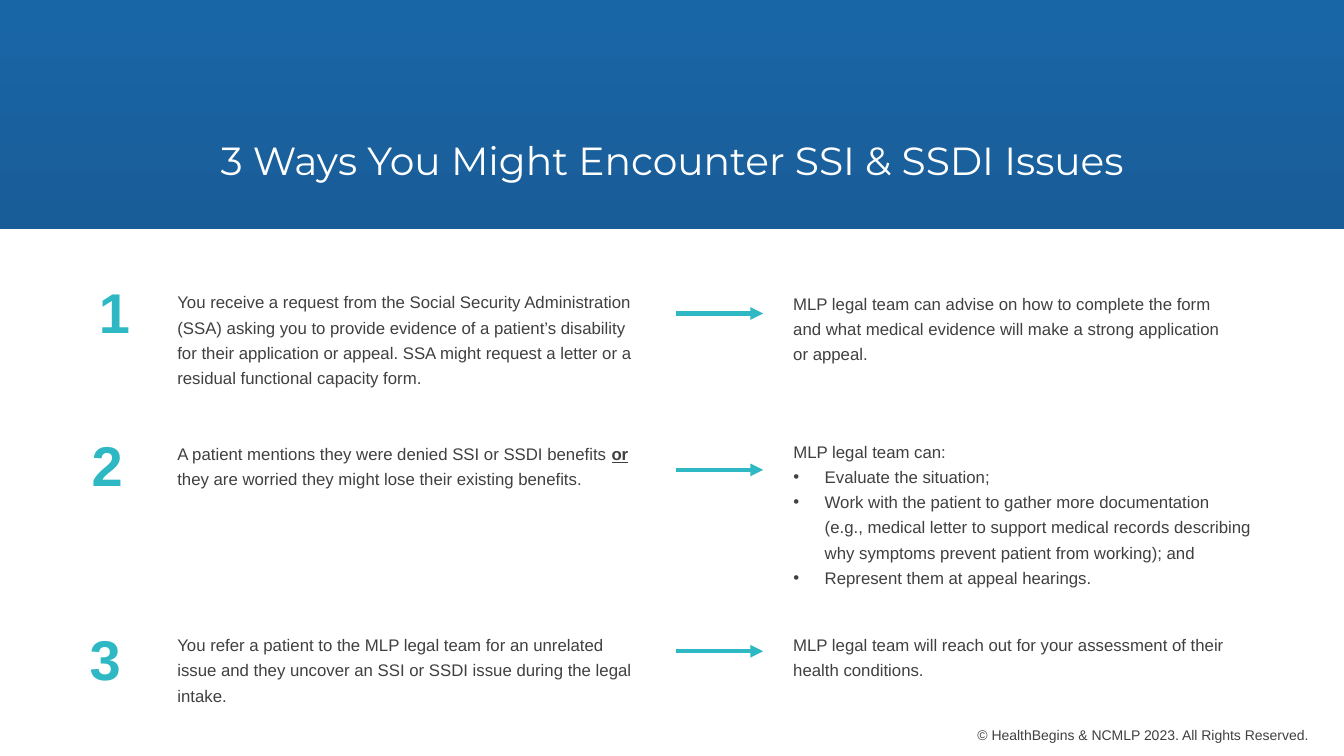
from dataclasses import dataclass

import lxml.etree
import pptx
import pptx.dml.color
import pptx.enum.shapes
import pptx.enum.text
import pptx.oxml.ns
import pptx.util

Cm, Pt = pptx.util.Cm, pptx.util.Pt
qn = pptx.oxml.ns.qn
ALIGN = pptx.enum.text.PP_ALIGN
ANCHOR = pptx.enum.text.MSO_ANCHOR
AUTOSIZE = pptx.enum.text.MSO_AUTO_SIZE

SLIDE_W, SLIDE_H = 33.87, 19.05
BAND_H = 5.77
TEAL, GREY, WHITE = "2EB8C3", "404040", "FFFFFF"
CASE_X, CASE_W = 4.22, 12.32
ARROW_X, ARROW_END = 17.04, 19.23
ANSWER_X, ANSWER_W = 19.74, 12.6
INDENT = 0.79
BULLET, EMPHASIS = "• ", "**"


@dataclass
class Row:
    """One numbered situation, its arrow and the legal team's answer."""
    number: str
    number_x: float
    number_y: float
    case: str
    case_y: float
    case_h: float
    arrow_y: float
    answer: list[str]
    answer_y: float
    answer_h: float


ROWS = [
    Row("1", 2.24, 6.86,
        "You receive a request from the Social Security Administration (SSA) asking you "
        "to provide evidence of a patient’s disability for their application or appeal. "
        "SSA might request a letter or a residual functional capacity form.",
        7.11, 2.79, 7.9,
        ["MLP legal team can advise on how to complete the form\n"
         "and what medical evidence will make a strong application\nor appeal."],
        7.14, 2.16),
    Row("2", 2.06, 10.72,
        "A patient mentions they were denied SSI or SSDI benefits **or** "
        "they are worried they might lose their existing benefits.",
        10.92, 1.5, 11.84,
        ["MLP legal team can:",
         "• Evaluate the situation;",
         "• Work with the patient to gather more documentation\n"
         "(e.g., medical letter to support medical records describing "
         "why symptoms prevent patient from working); and",
         "• Represent them at appeal hearings."],
        10.87, 4.06),
    Row("3", 2.01, 15.6,
        "You refer a patient to the MLP legal team for an unrelated issue and they "
        "uncover an SSI or SSDI issue during the legal intake.",
        15.75, 2.16, 16.41,
        ["MLP legal team will reach out for your assessment of their health conditions."],
        15.75, 1.5),
]


def rgb(value: str) -> pptx.dml.color.RGBColor:
    return pptx.dml.color.RGBColor.from_string(value)


def place(sp, x: float, y: float, w: float, h: float) -> None:
    sp.left, sp.top, sp.width, sp.height = Cm(x), Cm(y), Cm(w), Cm(h)


def set_bullet(p, bulleted: bool) -> None:
    pPr = p._p.get_or_add_pPr()
    pPr.set("marL", str(Cm(INDENT) if bulleted else 0))
    pPr.set("indent", str(-Cm(INDENT) if bulleted else 0))
    if bulleted:
        lxml.etree.SubElement(pPr, qn("a:buFont")).set("typeface", "Arial")
        lxml.etree.SubElement(pPr, qn("a:buChar")).set("char", "•")
    else:
        lxml.etree.SubElement(pPr, qn("a:buNone"))


def write(sp, lines: list[str], size: float, color: str, font: str = "Arial",
          bold: bool = False, spacing: float = 1.0, align=ALIGN.LEFT) -> None:
    """Fill a shape; text between ** marks is bold and underlined."""
    tf = sp.text_frame
    tf.word_wrap = True
    tf.auto_size = AUTOSIZE.NONE
    tf.vertical_anchor = ANCHOR.TOP
    for i, line in enumerate(lines):
        p = tf.paragraphs[0] if i == 0 else tf.add_paragraph()
        parts = line.removeprefix(BULLET).split(EMPHASIS)
        p.text = parts[0]
        for part in parts[1:]:
            p.add_run().text = part
        p.alignment, p.line_spacing = align, spacing
        p.space_before = p.space_after = Pt(0)
        set_bullet(p, line.startswith(BULLET))
        for r in p.runs:
            r.font.name, r.font.size, r.font.bold = font, Pt(size), bold
            r.font.color.rgb = rgb(color)
        for r in p.runs[1::2] if len(parts) > 1 else []:
            r.font.bold = r.font.underline = True
        for br in p._p.findall(qn("a:br")):
            lxml.etree.SubElement(br, qn("a:rPr")).set("sz", str(size * 100))


def add_text(s, x: float, y: float, w: float, h: float, lines: list[str],
             size: float, color: str, **style) -> None:
    write(s.shapes.add_textbox(Cm(x), Cm(y), Cm(w), Cm(h)), lines, size, color, **style)


def add_band(s) -> None:
    sp = s.shapes.add_shape(pptx.enum.shapes.MSO_SHAPE.RECTANGLE,
                            0, 0, Cm(SLIDE_W), Cm(BAND_H))
    sp.shadow.inherit = False
    sp.line.fill.background()
    sp.fill.gradient()
    sp.fill.gradient_angle = 270
    for stop, position, color in zip(sp.fill.gradient_stops, (0, 1), ("1966A7", "195D98")):
        stop.position, stop.color.rgb = position, rgb(color)
    s.shapes._spTree.insert(2, sp._element)  # behind the title


def add_arrow(s, y: float) -> None:
    line = s.shapes.add_connector(pptx.enum.shapes.MSO_CONNECTOR.STRAIGHT,
                                  Cm(ARROW_X), Cm(y), Cm(ARROW_END), Cm(y))
    line.line.color.rgb = rgb(TEAL)
    line.line.width = Pt(3)
    ln = line.line._get_or_add_ln()
    lxml.etree.SubElement(ln, qn("a:tailEnd")).set("type", "triangle")
    lxml.etree.SubElement(line._element.spPr, qn("a:effectLst"))


def add_row(s, row: Row, body) -> None:
    add_text(s, row.number_x, row.number_y, 1.52, 1.96, [row.number], 40, TEAL, bold=True)
    add_text(s, CASE_X, row.case_y, CASE_W, row.case_h, [row.case], 12, GREY, spacing=1.25)
    add_arrow(s, row.arrow_y)
    box = (ANSWER_X, row.answer_y, ANSWER_W, row.answer_h)
    if len(row.answer) > 1:  # the list goes in the body placeholder
        place(body, *box)
        write(body, row.answer, 12, GREY, spacing=1.25)
    else:
        add_text(s, *box, row.answer, 12, GREY, spacing=1.25)


def main() -> None:
    prs = pptx.Presentation()
    prs.slide_width, prs.slide_height = Cm(SLIDE_W), Cm(SLIDE_H)
    s = prs.slides.add_slide(prs.slide_layouts[1])

    # Header
    add_band(s)
    title = s.shapes.title
    place(title, 0, 3.07, SLIDE_W, 2.34)
    write(title, ["3 Ways You Might Encounter SSI & SSDI Issues"], 28, WHITE,
          font="Montserrat", spacing=1.2, align=ALIGN.CENTER)

    # Situations and answers
    for row in ROWS:
        add_row(s, row, s.placeholders[1])

    # Footer
    add_text(s, 24.05, 18.19, 9.17, 0.69,
             ["© HealthBegins & NCMLP 2023. All Rights Reserved."], 10, GREY, align=ALIGN.RIGHT)

    prs.save("out.pptx")


if __name__ == "__main__":
    main()
